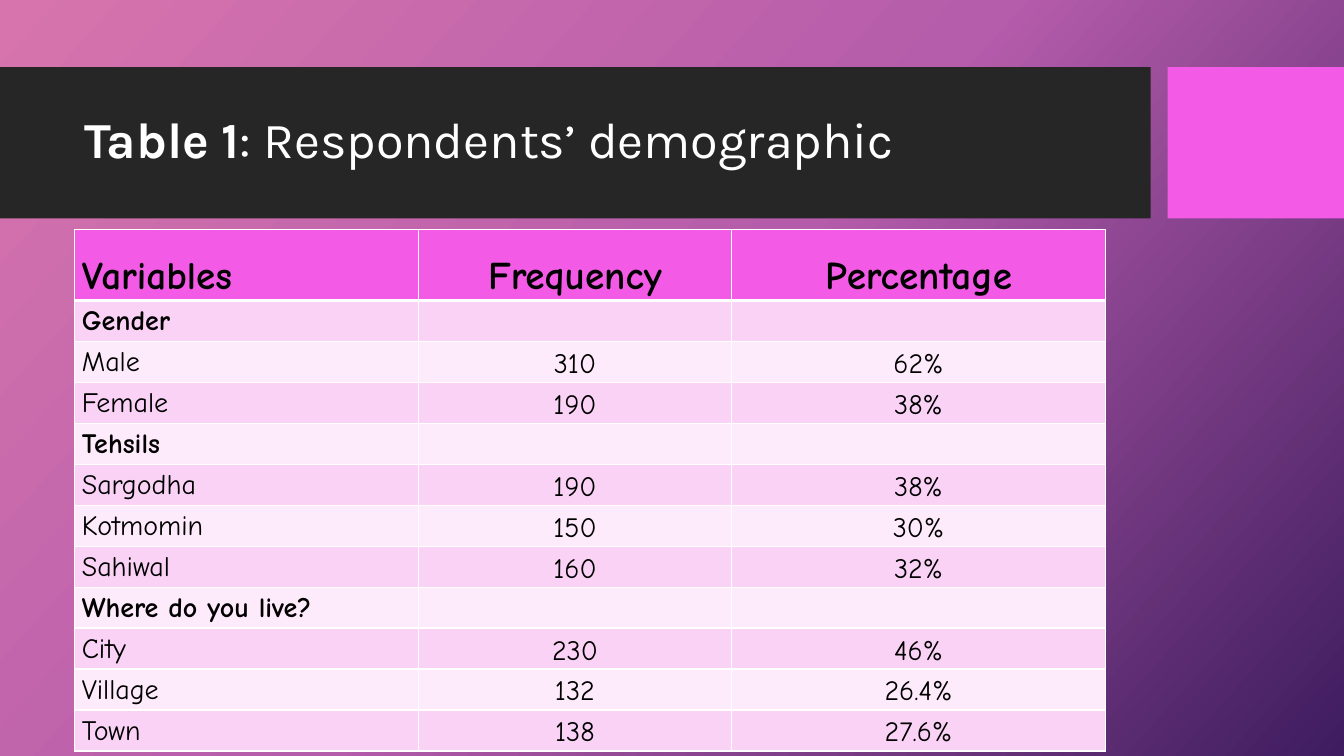
"""Build the slide with the table of respondents' demographics."""
import copy
import dataclasses

import lxml.etree
import pptx
import pptx.dml.color
import pptx.enum.shapes
import pptx.enum.text
import pptx.oxml.ns
import pptx.slide
import pptx.table
import pptx.text.text
import pptx.util

RGB = pptx.dml.color.RGBColor
ALIGN = pptx.enum.text.PP_ALIGN
ANCHOR = pptx.enum.text.MSO_ANCHOR

WHITE = RGB(0xFF, 0xFF, 0xFF)
BLACK = RGB(0x00, 0x00, 0x00)
CHARCOAL = RGB(0x26, 0x26, 0x26)
MAGENTA = RGB(0xF3, 0x5A, 0xE6)
BAND_COLORS = (RGB(0xFA, 0xD2, 0xF5), RGB(0xFD, 0xEA, 0xFA))
BACKDROP_COLORS = (RGB(0xD7, 0x74, 0xAD), RGB(0xB5, 0x5C, 0xAB), RGB(0x3E, 0x1C, 0x5F))
BACKDROP_ANGLE = 42

GRID_COLUMNS, GRID_ROWS = 160, 90
UNIT = pptx.util.Inches(1) / 12
TITLE_FONT, TABLE_FONT = "Karla", "Comic Neue"

TABLE_LEFT, TABLE_TOP = 8.9, 27.36
COLUMN_WIDTHS = (40.9, 37.3, 44.5)
HEADER_HEIGHT, BODY_HEIGHT = 8, 4.88
THIN_LINE, HEADER_LINE = 1, 3

HEADINGS = ("Variables", "Frequency", "Percentage")
GROUPS = {
    "Gender": (("Male", "310", "62%"), ("Female", "190", "38%")),
    "Tehsils": (
        ("Sargodha", "190", "38%"),
        ("Kotmomin", "150", "30%"),
        ("Sahiwal", "160", "32%"),
    ),
    "Where do you live?": (
        ("City", "230", "46%"),
        ("Village", "132", "26.4%"),
        ("Town", "138", "27.6%"),
    ),
}


@dataclasses.dataclass(frozen=True)
class Band:
    """A filled rectangle, measured in grid units."""

    left: float
    top: float
    width: float
    height: float
    color: RGB


@dataclasses.dataclass(frozen=True)
class TableRow:
    """The texts of one table row and how they are set."""

    texts: tuple[str, ...]
    fill: RGB
    bold: bool = False
    header: bool = False
    line_above: float = THIN_LINE


TITLE_BANDS = (
    Band(0, 8, 137, 18, CHARCOAL),
    Band(139, 8, 21, 18, MAGENTA),
)


def grid(units: float) -> pptx.util.Length:
    """Turn grid units into a length."""
    return pptx.util.Emu(round(units * UNIT))


def paint_backdrop(slide: pptx.slide.Slide) -> None:
    """Fill the background with an evenly spaced gradient."""
    fill = slide.background.fill
    fill.gradient()
    fill.gradient_angle = 360 - BACKDROP_ANGLE
    stop_list = slide.element.find(".//" + pptx.oxml.ns.qn("a:gsLst"))
    stop_list.append(copy.deepcopy(stop_list[-1]))
    for index, (stop, color) in enumerate(zip(fill.gradient_stops, BACKDROP_COLORS)):
        stop.position = index / (len(BACKDROP_COLORS) - 1)
        stop.color.rgb = color


def draw_band(slide: pptx.slide.Slide, band: Band) -> None:
    """Draw one plain rectangle."""
    shape = slide.shapes.add_shape(
        pptx.enum.shapes.MSO_SHAPE.RECTANGLE,
        grid(band.left), grid(band.top), grid(band.width), grid(band.height),
    )
    shape.shadow.inherit = False
    shape.fill.solid()
    shape.fill.fore_color.rgb = band.color
    shape.line.fill.background()


def add_run(
    paragraph: pptx.text.text._Paragraph,
    text: str, font: str, size: float, color: RGB, bold: bool,
) -> None:
    """Append one formatted run."""
    run = paragraph.add_run()
    run.text = text
    run.font.name = font
    run.font.size = pptx.util.Pt(size)
    run.font.color.rgb = color
    run.font.bold = bold


def draw_title(slide: pptx.slide.Slide) -> None:
    """Write the title over the dark band."""
    title = slide.shapes.add_textbox(grid(8.9), grid(9.8), grid(126.1), grid(14.2))
    frame = title.text_frame
    frame.word_wrap = True
    frame.vertical_anchor = ANCHOR.MIDDLE
    paragraph = frame.paragraphs[0]
    paragraph.line_spacing = 0.9
    add_run(paragraph, "Table 1", TITLE_FONT, 36, WHITE, True)
    add_run(paragraph, ": Respondents’ demographic", TITLE_FONT, 36, WHITE, False)


def draw_borders(cell: pptx.table._Cell, above: float, below: float) -> None:
    """Rule all four sides of a cell in white."""
    properties = cell._tc.get_or_add_tcPr()
    sides = {"lnL": THIN_LINE, "lnR": THIN_LINE, "lnT": above, "lnB": below}
    for side, width in sides.items():
        line = lxml.etree.SubElement(
            properties, pptx.oxml.ns.qn(f"a:{side}"), w=str(pptx.util.Pt(width))
        )
        solid = lxml.etree.SubElement(line, pptx.oxml.ns.qn("a:solidFill"))
        lxml.etree.SubElement(solid, pptx.oxml.ns.qn("a:srgbClr"), val=str(WHITE))


def fill_cell(cell: pptx.table._Cell, row: TableRow, column: int) -> None:
    """Set the borders, fill and text of one cell."""
    draw_borders(cell, row.line_above, HEADER_LINE if row.header else THIN_LINE)
    cell.fill.solid()
    cell.fill.fore_color.rgb = row.fill
    cell.margin_left = cell.margin_right = pptx.util.Inches(0.07)
    cell.margin_top = cell.margin_bottom = 0
    if row.header or column:
        cell.vertical_anchor = ANCHOR.MIDDLE
    text = row.texts[column]
    if not text:
        return
    paragraph = cell.text_frame.paragraphs[0]
    paragraph.alignment = ALIGN.CENTER if column else ALIGN.JUSTIFY
    paragraph.line_spacing = 1.5 if row.header else 1.15
    add_run(paragraph, text, TABLE_FONT, 28 if row.header else 20, BLACK, row.bold)


def table_rows() -> list[TableRow]:
    """List the header, the group names and their members in order."""
    rows = [TableRow(HEADINGS, MAGENTA, bold=True, header=True)]
    for group, members in GROUPS.items():
        for texts in ((group, "", ""), *members):
            rows.append(TableRow(
                texts,
                BAND_COLORS[(len(rows) - 1) % len(BAND_COLORS)],
                bold=texts[0] == group,
                line_above=HEADER_LINE if rows[-1].header else THIN_LINE,
            ))
    return rows


def draw_table(slide: pptx.slide.Slide, rows: list[TableRow]) -> None:
    """Draw the demographics table."""
    heights = [HEADER_HEIGHT if row.header else BODY_HEIGHT for row in rows]
    demographics = slide.shapes.add_table(
        len(rows), len(COLUMN_WIDTHS), grid(TABLE_LEFT), grid(TABLE_TOP),
        grid(sum(COLUMN_WIDTHS)), grid(sum(heights)),
    ).table
    for column, width in zip(demographics.columns, COLUMN_WIDTHS):
        column.width = grid(width)
    for index, (row, height) in enumerate(zip(rows, heights)):
        demographics.rows[index].height = grid(height)
        for column in range(len(COLUMN_WIDTHS)):
            fill_cell(demographics.cell(index, column), row, column)


def main() -> None:
    """Build and save the presentation."""
    presentation = pptx.Presentation()
    presentation.slide_width = grid(GRID_COLUMNS)
    presentation.slide_height = grid(GRID_ROWS)
    slide = presentation.slides.add_slide(presentation.slide_layouts[6])
    paint_backdrop(slide)
    for band in TITLE_BANDS:
        draw_band(slide, band)
    draw_title(slide)
    draw_table(slide, table_rows())
    presentation.save("out.pptx")


if __name__ == "__main__":
    main()
